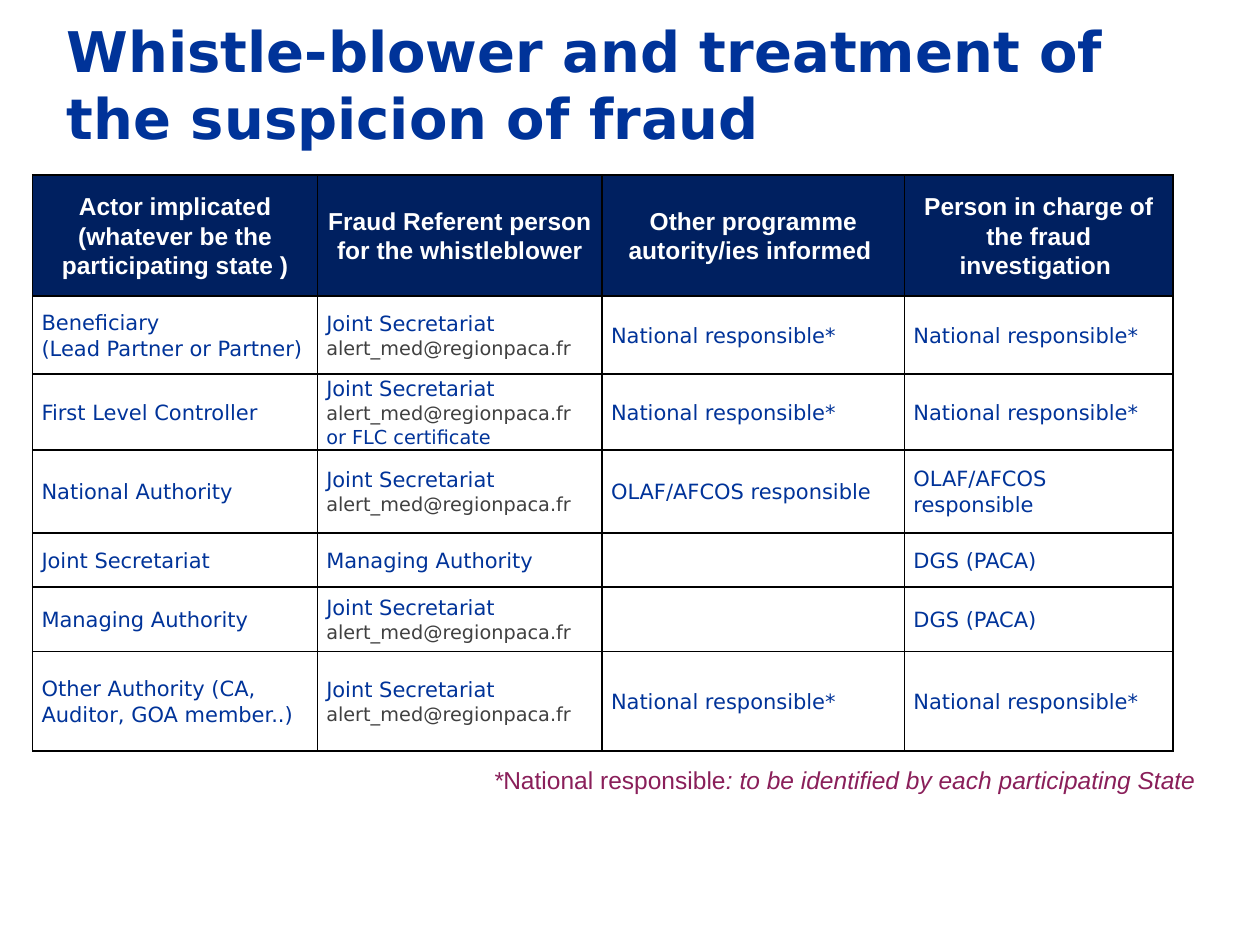
import dataclasses

import lxml.etree
import pptx
import pptx.dml.color
import pptx.enum.text
import pptx.oxml.ns
import pptx.util

Inches = pptx.util.Inches
Pt = pptx.util.Pt
Align = pptx.enum.text.PP_ALIGN
Anchor = pptx.enum.text.MSO_ANCHOR
qn = pptx.oxml.ns.qn


@dataclasses.dataclass(frozen=True)
class TextStyle:
    size: int
    font: str
    color: str
    bold: bool = False
    italic: bool = False


@dataclasses.dataclass(frozen=True)
class Theme:
    title: TextStyle = TextStyle(32, "DejaVu Sans", "003399", bold=True)
    header: TextStyle = TextStyle(14, "Arial", "FFFFFF", bold=True)
    body: TextStyle = TextStyle(12, "DejaVu Sans", "003399")
    detail: TextStyle = TextStyle(11, "DejaVu Sans", "003399")
    email: TextStyle = TextStyle(11, "DejaVu Sans", "404040")
    note: TextStyle = TextStyle(14, "Arial", "8A1F5A")
    note_italic: TextStyle = TextStyle(14, "Arial", "8A1F5A", italic=True)
    header_fill: str = "002060"
    border: str = "000000"
    border_width: int = 1
    cell_spacing: float = 1.07
    cell_inset: float = 0.07


def rgb(color):
    return pptx.dml.color.RGBColor.from_string(color)


class SlideBuilder:
    def __init__(self, presentation, theme):
        self.theme = theme
        self.slide = presentation.slides.add_slide(presentation.slide_layouts[5])

    def add_text(self, frame, paragraphs, align=Align.LEFT, spacing=None):
        for index, runs in enumerate(paragraphs):
            paragraph = frame.add_paragraph() if index else frame.paragraphs[0]
            paragraph.alignment = align
            if spacing:
                paragraph.line_spacing = spacing
            for text, style in runs:
                run = paragraph.add_run()
                run.text = text
                run.font.name = style.font
                run.font.size = Pt(style.size)
                run.font.bold = style.bold
                run.font.italic = style.italic
                run.font.color.rgb = rgb(style.color)

    def title(self, text, box):
        heading = self.slide.shapes.title
        heading.left, heading.top, heading.width, heading.height = map(Inches, box)
        frame = heading.text_frame
        frame.word_wrap = True
        frame.auto_size = pptx.enum.text.MSO_AUTO_SIZE.NONE
        frame.vertical_anchor = Anchor.MIDDLE
        self.add_text(frame, [[(text, self.theme.title)]])

    def note(self, runs, box):
        frame = self.slide.shapes.add_textbox(*map(Inches, box)).text_frame
        frame.word_wrap = True
        frame.auto_size = pptx.enum.text.MSO_AUTO_SIZE.SHAPE_TO_FIT_TEXT
        self.add_text(frame, [runs], Align.JUSTIFY)

    def outline(self, cell):
        properties = cell._tc.get_or_add_tcPr()
        for side in ("a:lnL", "a:lnR", "a:lnT", "a:lnB"):
            line = lxml.etree.SubElement(properties, qn(side), w=str(Pt(self.theme.border_width)))
            fill = lxml.etree.SubElement(line, qn("a:solidFill"))
            lxml.etree.SubElement(fill, qn("a:srgbClr"), val=self.theme.border)

    def cell(self, cell, paragraphs, is_header):
        cell.margin_left = cell.margin_right = Inches(self.theme.cell_inset)
        cell.margin_top = cell.margin_bottom = 0
        cell.vertical_anchor = Anchor.MIDDLE
        self.outline(cell)
        if is_header:
            cell.fill.solid()
            cell.fill.fore_color.rgb = rgb(self.theme.header_fill)
        else:
            cell.fill.background()
        align = Align.CENTER if is_header else Align.LEFT
        self.add_text(cell.text_frame, paragraphs, align, self.theme.cell_spacing)

    def table(self, rows, left, top, widths, heights):
        table = self.slide.shapes.add_table(
            len(heights), len(widths), Inches(left), Inches(top),
            Inches(sum(widths)), Inches(sum(heights))).table
        table.first_row = table.horz_banding = False
        for column, width in zip(table.columns, widths):
            column.width = Inches(width)
        for row, height in zip(table.rows, heights):
            row.height = Inches(height)
        for row_index, row in enumerate(rows):
            for column_index, paragraphs in enumerate(row):
                self.cell(table.cell(row_index, column_index), paragraphs, row_index == 0)


def main():
    theme = Theme()
    presentation = pptx.Presentation()
    presentation.slide_width, presentation.slide_height = Inches(10), Inches(7.5)
    builder = SlideBuilder(presentation, theme)

    def lines(*texts, style=theme.body):
        return [[(text, style)] for text in texts]

    secretariat = lines("Joint Secretariat") + lines("alert_med@regionpaca.fr", style=theme.email)
    certificate = lines("or FLC certificate", style=theme.detail)
    national = lines("National responsible*")
    olaf = lines("OLAF/AFCOS responsible")
    dgs = lines("DGS (PACA)")
    headings = (
        "Actor implicated (whatever be the participating state )",
        "Fraud Referent person for the whistleblower",
        "Other programme autority/ies informed ",
        "Person in charge of the fraud investigation ",
    )
    rows = [
        [lines(heading, style=theme.header) for heading in headings],
        [lines("Beneficiary", "(Lead Partner or Partner)"), secretariat, national, national],
        [lines("First Level Controller"), secretariat + certificate, national, national],
        [lines("National Authority"), secretariat, olaf, olaf],
        [lines("Joint Secretariat"), lines("Managing Authority"), [], dgs],
        [lines("Managing Authority"), secretariat, [], dgs],
        [lines("Other Authority (CA, Auditor, GOA member..)"), secretariat, national, national],
    ]

    builder.title("Whistle-blower and treatment of the suspicion of fraud", (0.43, 0.29, 9, 0.75))
    builder.table(rows, 0.26, 1.39, (2.26, 2.26, 2.4, 2.13),
                  (0.96, 0.62, 0.6, 0.66, 0.43, 0.51, 0.79))
    builder.note([("*", theme.note_italic), ("National responsible", theme.note),
                  (": to be identified by each participating State", theme.note_italic)],
                 (3.82, 6.02, 5.85, 0.34))
    presentation.save("out.pptx")


if __name__ == "__main__":
    main()
